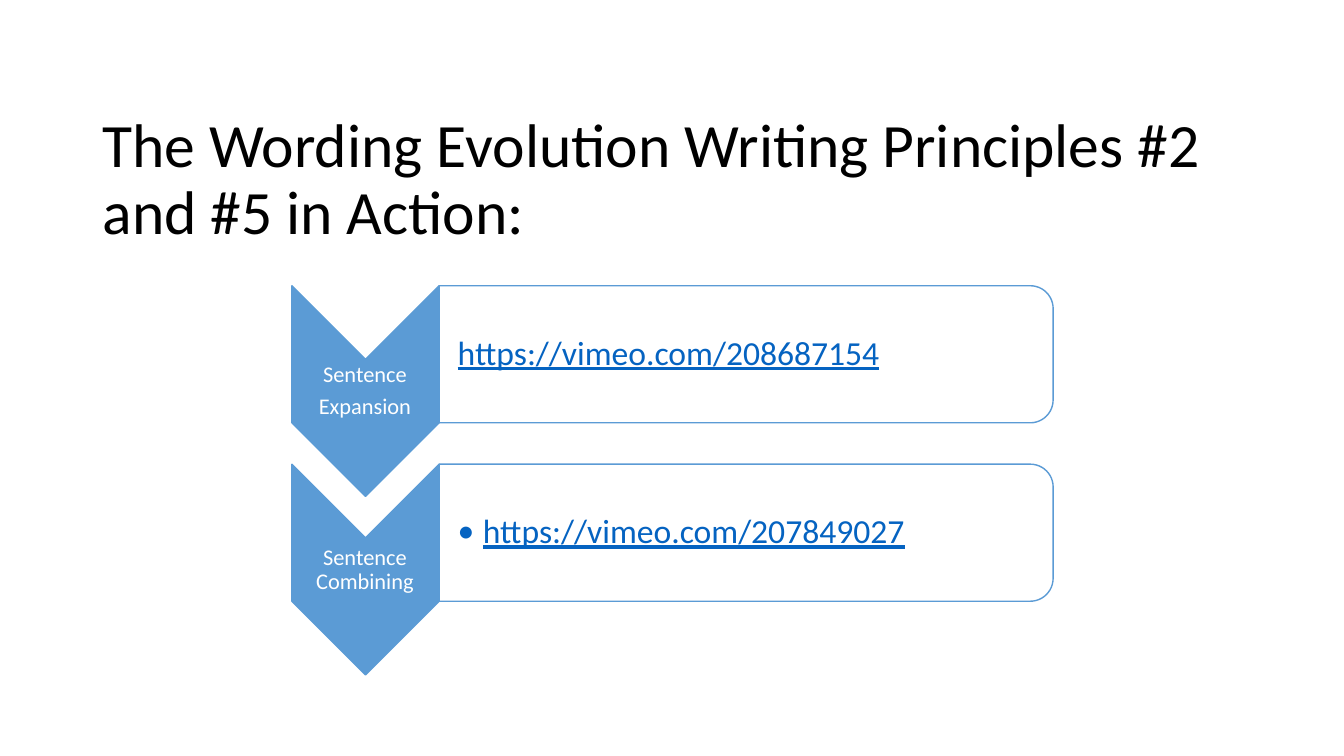
from dataclasses import dataclass

from lxml import etree
from pptx import Presentation
from pptx.dml.color import RGBColor
from pptx.enum.shapes import MSO_SHAPE
from pptx.enum.text import MSO_ANCHOR, PP_ALIGN
from pptx.oxml.ns import qn
from pptx.util import Inches, Pt

COLORS = {"black": "000000", "white": "FFFFFF", "blue": "5B9BD5", "link": "0563C1"}
FONT = "Calibri"
FIRST_TOP = 2.83
STEP_PITCH = 1.77


@dataclass(frozen=True)
class Step:
    label: tuple[str, ...]
    link: str
    bulleted: bool


STEPS = (
    Step(("Sentence", "Expansion"), "https://vimeo.com/208687154", False),
    Step(("Sentence Combining",), "https://vimeo.com/207849027", True),
)


def rgb(name: str) -> RGBColor:
    return RGBColor.from_string(COLORS[name])


def add_text(slide, box: tuple[float, ...], insets: tuple[float, ...],
             lines: tuple[str, ...], size: int, color: str,
             space_after: float = 0, align=PP_ALIGN.LEFT) -> list:
    tf = slide.shapes.add_textbox(*(Inches(v) for v in box)).text_frame
    tf.word_wrap = True
    tf.vertical_anchor = MSO_ANCHOR.MIDDLE
    tf.margin_left, tf.margin_top, tf.margin_right, tf.margin_bottom = (
        Inches(v) for v in insets)
    for i, line in enumerate(lines):
        p = tf.paragraphs[0] if i == 0 else tf.add_paragraph()
        p.alignment = align
        p.line_spacing = 0.9
        p.space_after = Pt(space_after)
        r = p.add_run()
        r.text = line
        r.font.name = FONT
        r.font.size = Pt(size)
        r.font.color.rgb = rgb(color)
    return list(tf.paragraphs)


def add_turned_shape(slide, kind: MSO_SHAPE, box: tuple[float, ...], fill: str):
    sp = slide.shapes.add_shape(kind, *(Inches(v) for v in box))
    sp.rotation = 90
    sp.shadow.inherit = False
    sp.fill.solid()
    sp.fill.fore_color.rgb = rgb(fill)
    sp.line.color.rgb = rgb("blue")
    sp.line.width = Pt(1)
    return sp


def add_step(slide, step: Step, top: float) -> None:
    add_turned_shape(slide, MSO_SHAPE.CHEVRON, (2.58, top + 0.32, 2.09, 1.46), "blue")
    add_text(slide, (2.89, top + 0.74, 1.46, 0.63), (0.01,) * 4,
             step.label, 16, "white", 5.6, PP_ALIGN.CENTER)

    panel = add_turned_shape(slide, MSO_SHAPE.ROUND_2_SAME_RECTANGLE,
                             (6.72, top - 2.36, 1.36, 6.09), "white")
    color = panel.fill._xPr.find(qn("a:solidFill"))[0]
    etree.SubElement(color, qn("a:alpha"), val="90000")

    p = add_text(slide, (4.35, top + 0.07, 6.03, 1.23), (0.19, 0.02, 0.02, 0.02),
                 (step.link,), 24, "link", 3.6)[0]
    p.runs[0].font.underline = True
    pPr = p._p.get_or_add_pPr()
    pPr.set("marL", str(Inches(0.25)))
    pPr.set("indent", str(-Inches(0.25)))
    if step.bulleted:
        etree.SubElement(pPr, qn("a:buFont"), typeface=FONT)
        etree.SubElement(pPr, qn("a:buChar"), char="•")
    else:
        etree.SubElement(pPr, qn("a:buNone"))


def main() -> None:
    """Build the slide with a title and two linked writing steps."""
    prs = Presentation()
    prs.slide_width, prs.slide_height = Inches(13.33), Inches(7.5)
    s = prs.slides.add_slide(prs.slide_layouts[6])
    add_text(s, (0.92, 1.07, 11.5, 1.45), (0.1, 0.05, 0.1, 0.05),
             ("The Wording Evolution Writing Principles #2 and #5 in Action:",),
             44, "black")
    for i, step in enumerate(STEPS):
        add_step(s, step, FIRST_TOP + i * STEP_PITCH)
    prs.save("out.pptx")


if __name__ == "__main__":
    main()
